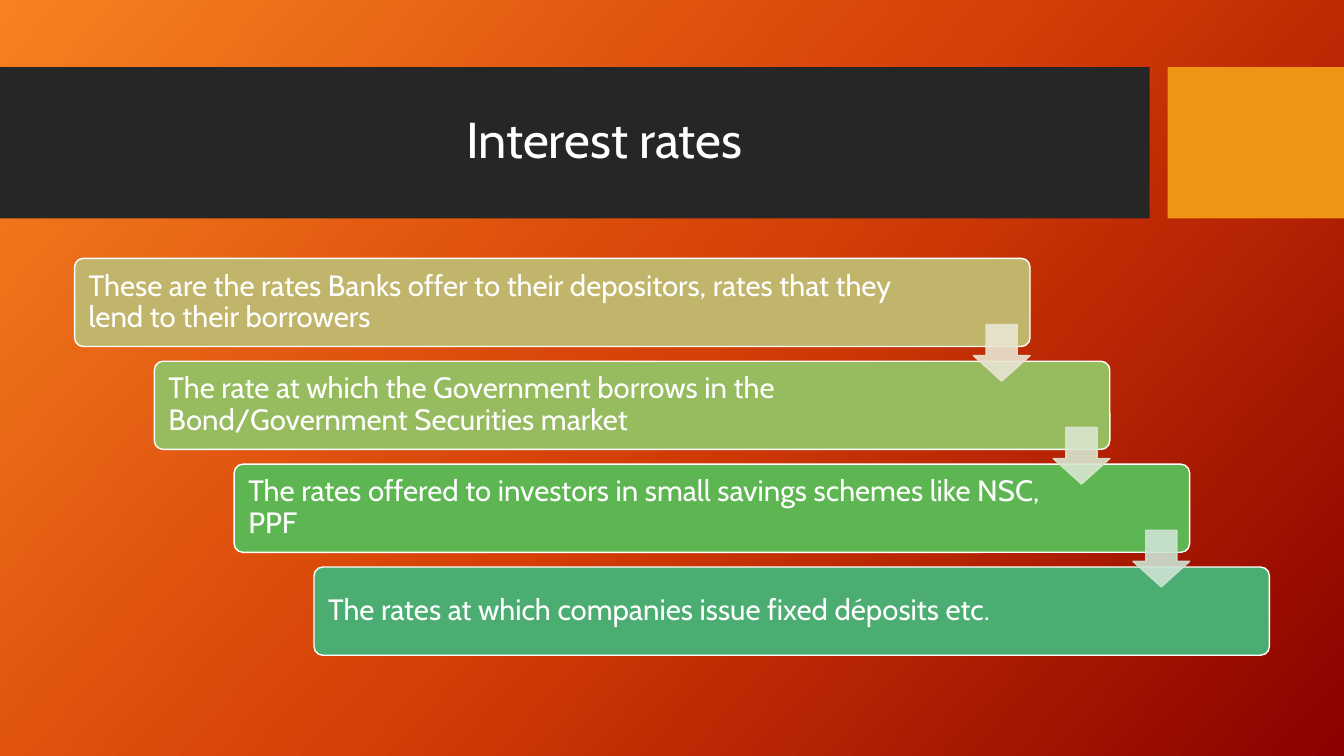
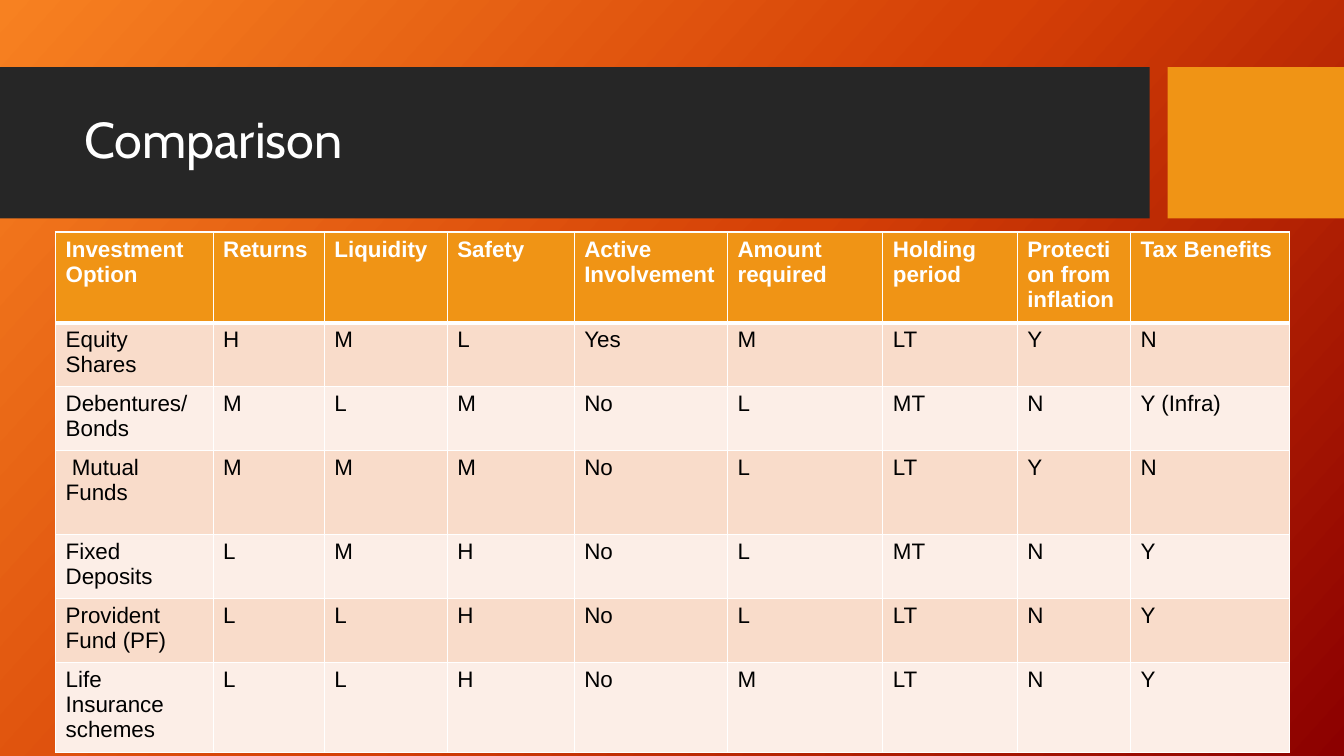
"""Build two slides on interest rates and a comparison of investment options."""
from copy import deepcopy

from lxml.etree import SubElement
from pptx import Presentation
from pptx.dml.color import RGBColor
from pptx.enum.shapes import MSO_SHAPE
from pptx.enum.text import MSO_ANCHOR, PP_ALIGN
from pptx.oxml.ns import qn
from pptx.util import Pt

PX = 9525
SLIDE_WIDTH, SLIDE_HEIGHT = 1280, 720
HEADING_FONT, TABLE_FONT = "Cabin", "Arial"

WHITE = RGBColor(0xFF, 0xFF, 0xFF)
BLACK = RGBColor(0x00, 0x00, 0x00)
CHARCOAL = RGBColor(0x26, 0x26, 0x26)
AMBER = RGBColor(0xF0, 0x94, 0x15)
PEACH = RGBColor(0xF9, 0xDC, 0xCA)
PALE_PEACH = RGBColor(0xFC, 0xEE, 0xE7)
BACKGROUND_STOPS = [
    (0, RGBColor(0xF7, 0x81, 0x21)),
    (0.5, RGBColor(0xD5, 0x40, 0x06)),
    (1, RGBColor(0x8C, 0x00, 0x00)),
]
STEP_COLORS = [
    RGBColor(0xC1, 0xB5, 0x6B),
    RGBColor(0x97, 0xBB, 0x5F),
    RGBColor(0x5E, 0xB6, 0x53),
    RGBColor(0x4B, 0xAD, 0x72),
]
ARROW_COLORS = [
    RGBColor(0xE9, 0xE5, 0xD3),
    RGBColor(0xD9, 0xE6, 0xCF),
    RGBColor(0xCD, 0xE3, 0xD3),
]


def add_block(slide, preset, left, top, width, height, color, line_color=None):
    shape = slide.shapes.add_shape(preset, left * PX, top * PX, width * PX, height * PX)
    shape.shadow.inherit = False
    shape.fill.solid()
    shape.fill.fore_color.rgb = color
    if line_color is None:
        shape.line.fill.background()
    else:
        shape.line.color.rgb = line_color
        shape.line.width = Pt(1)
    return shape


def add_titled_slide(title, alignment):
    slide = presentation.slides.add_slide(presentation.slide_layouts[6])
    fill = slide.background.fill
    fill.gradient()
    fill.gradient_angle = 318
    stop_list = slide.element.find(".//" + qn("a:gsLst"))
    stop_list.append(deepcopy(stop_list[0]))
    for stop, (position, color) in zip(fill.gradient_stops, BACKGROUND_STOPS):
        stop.position = position
        stop.color.rgb = color

    add_block(slide, MSO_SHAPE.RECTANGLE, 0, 64, 1095, 144, CHARCOAL)
    add_block(slide, MSO_SHAPE.RECTANGLE, 1112, 64, 168, 144, AMBER)

    title_box = slide.shapes.add_textbox(71 * PX, 79 * PX, 1009 * PX, 113 * PX)
    title_box.text_frame.word_wrap = True
    title_box.text_frame.vertical_anchor = MSO_ANCHOR.MIDDLE
    paragraph = title_box.text_frame.paragraphs[0]
    paragraph.text = title
    paragraph.alignment = alignment
    paragraph.line_spacing = 0.9
    paragraph.font.name = HEADING_FONT
    paragraph.font.size = Pt(36)
    paragraph.font.color.rgb = WHITE
    return slide


presentation = Presentation()
presentation.slide_width = SLIDE_WIDTH * PX
presentation.slide_height = SLIDE_HEIGHT * PX

rates_slide = add_titled_slide("Interest rates", PP_ALIGN.CENTER)

STEP_LEFT, STEP_TOP, STEP_WIDTH, STEP_HEIGHT = 71, 246, 910, 84
STEP_SHIFT, STEP_PITCH = 76, 98
ARROW_SIZE, ARROW_DROP = 54, 63
steps = [
    ("These are the rates Banks offer to their depositors, rates that they lend to their borrowers", 95),
    ("The rate at which the Government borrows in the Bond/Government Securities market", 133),
    ("The rates offered to investors in small savings schemes like NSC, PPF", 133),
    ("The rates at which companies issue fixed déposits etc.", 133),
]
for index, (text, right_margin) in enumerate(steps):
    step = add_block(
        rates_slide, MSO_SHAPE.ROUNDED_RECTANGLE,
        STEP_LEFT + index * STEP_SHIFT, STEP_TOP + index * STEP_PITCH,
        STEP_WIDTH, STEP_HEIGHT, STEP_COLORS[index], WHITE,
    )
    step.adjustments[0] = 0.1
    frame = step.text_frame
    frame.word_wrap = True
    frame.vertical_anchor = MSO_ANCHOR.MIDDLE
    frame.margin_left = 11 * PX
    frame.margin_right = right_margin * PX
    paragraph = frame.paragraphs[0]
    paragraph.text = text
    paragraph.alignment = PP_ALIGN.LEFT
    paragraph.line_spacing = 0.9
    paragraph.font.name = HEADING_FONT
    paragraph.font.size = Pt(21)
    paragraph.font.color.rgb = WHITE

for index, color in enumerate(ARROW_COLORS):
    arrow = add_block(
        rates_slide, MSO_SHAPE.DOWN_ARROW,
        STEP_LEFT + index * STEP_SHIFT + STEP_WIDTH - ARROW_SIZE,
        STEP_TOP + index * STEP_PITCH + ARROW_DROP,
        ARROW_SIZE, ARROW_SIZE, color, color,
    )
    arrow.adjustments[0] = 0.55
    arrow.adjustments[1] = 0.45
    for color_element in arrow.element.spPr.iter(qn("a:srgbClr")):
        SubElement(color_element, qn("a:alpha"), val="90000")

comparison_slide = add_titled_slide("Comparison", PP_ALIGN.LEFT)

COLUMN_WIDTHS = [150, 106, 117, 121, 146, 148, 128, 108, 151]
ROW_HEIGHTS = [80, 57, 57, 80, 57, 57, 80]
options = [
    ["Investment Option", "Returns", "Liquidity", "Safety", "Active Involvement",
     "Amount required", "Holding period", "Protection from inflation", "Tax Benefits"],
    ["Equity Shares", "H", "M", "L", "Yes", "M", "LT", "Y", "N"],
    ["Debentures/Bonds", "M", "L", "M", "No", "L", "MT", "N", "Y (Infra)"],
    [" Mutual Funds", "M", "M", "M", "No", "L", "LT", "Y", "N"],
    ["Fixed Deposits", "L", "M", "H", "No", "L", "MT", "N", "Y"],
    ["Provident Fund (PF)", "L", "L", "H", "No", "L", "LT", "N", "Y"],
    ["Life Insurance schemes", "L", "L", "H", "No", "M", "LT", "N", "Y"],
]
table = comparison_slide.shapes.add_table(
    len(ROW_HEIGHTS), len(COLUMN_WIDTHS), 53 * PX, 221 * PX,
    sum(COLUMN_WIDTHS) * PX, sum(ROW_HEIGHTS) * PX,
).table
for column, width in zip(table.columns, COLUMN_WIDTHS):
    column.width = width * PX
for row, height in zip(table.rows, ROW_HEIGHTS):
    row.height = height * PX

for row_index, values in enumerate(options):
    is_header = row_index == 0
    if is_header:
        row_color = AMBER
    else:
        row_color = PEACH if row_index % 2 else PALE_PEACH
    border_widths = {
        "a:lnL": 1,
        "a:lnR": 1,
        "a:lnT": 3 if row_index == 1 else 1,
        "a:lnB": 3 if is_header else 1,
    }
    for column_index, value in enumerate(values):
        cell = table.cell(row_index, column_index)
        properties = cell._tc.get_or_add_tcPr()
        for tag, width in border_widths.items():
            border = SubElement(properties, qn(tag), w=str(Pt(width)))
            border_fill = SubElement(border, qn("a:solidFill"))
            SubElement(border_fill, qn("a:srgbClr"), val=str(WHITE))
        cell.fill.solid()
        cell.fill.fore_color.rgb = row_color
        paragraph = cell.text_frame.paragraphs[0]
        paragraph.text = value
        paragraph.font.name = TABLE_FONT
        paragraph.font.size = Pt(16)
        paragraph.font.bold = is_header
        paragraph.font.color.rgb = WHITE if is_header else BLACK

presentation.save("out.pptx")
